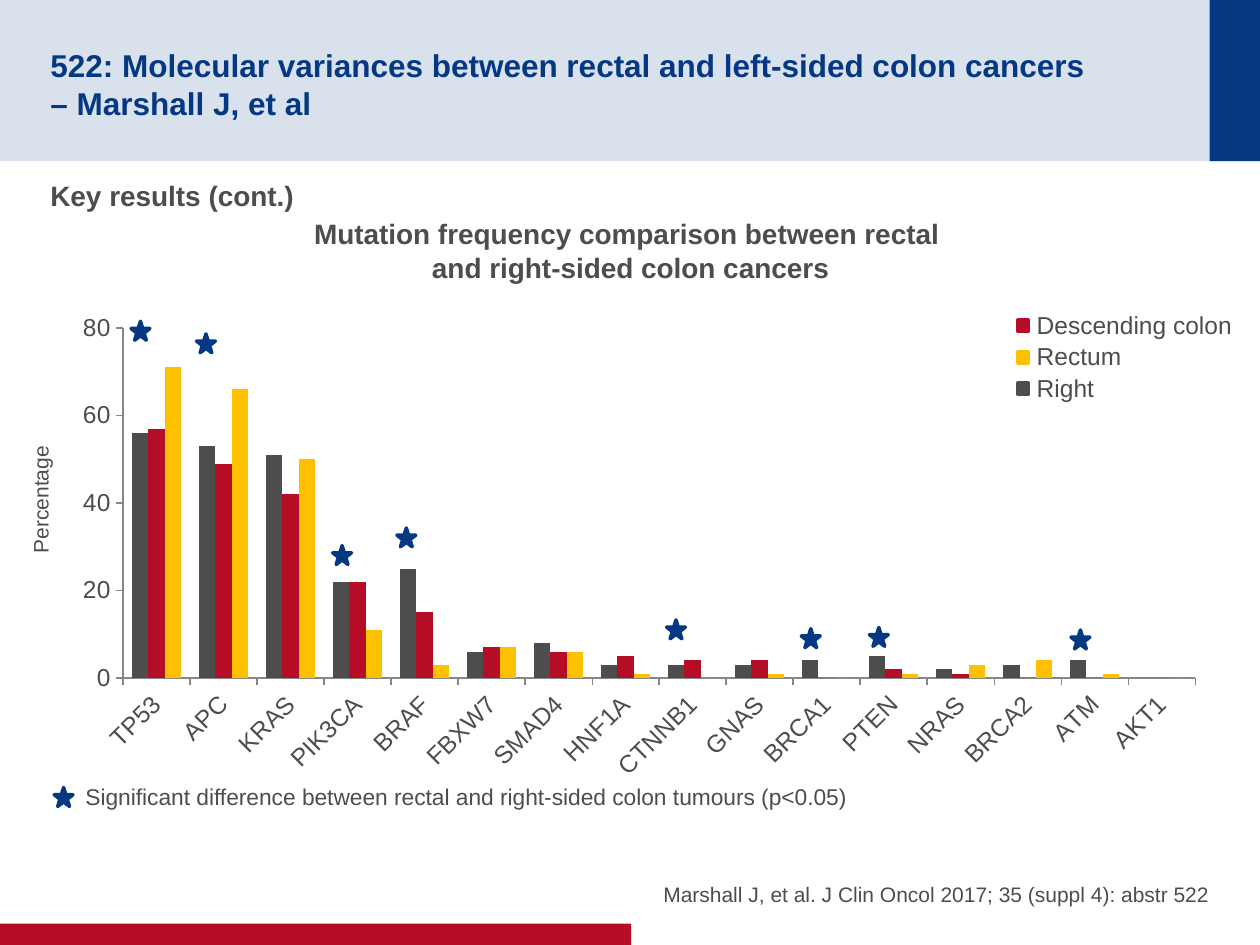
"""Builds a slide comparing mutation frequencies by tumour site."""
from pptx import Presentation
from pptx.chart.data import CategoryChartData
from pptx.dml.color import RGBColor
from pptx.enum.chart import XL_CHART_TYPE, XL_TICK_MARK
from pptx.enum.shapes import MSO_SHAPE
from pptx.enum.text import MSO_ANCHOR, PP_ALIGN
from pptx.oxml import parse_xml
from pptx.oxml.ns import nsdecls, qn
from pptx.util import Inches, Pt

CLUSTERED = XL_CHART_TYPE.COLUMN_CLUSTERED
OUTSIDE, NO_TICK = XL_TICK_MARK.OUTSIDE, XL_TICK_MARK.NONE
RECT, STAR = MSO_SHAPE.RECTANGLE, MSO_SHAPE.STAR_5_POINT
TOP, MIDDLE, BOTTOM = MSO_ANCHOR.TOP, MSO_ANCHOR.MIDDLE, MSO_ANCHOR.BOTTOM
LEFT, CENTER, RIGHT = PP_ALIGN.LEFT, PP_ALIGN.CENTER, PP_ALIGN.RIGHT

NAVY, PALE, RED, YELLOW, GREY, AXIS = "043882", "D9E1EC", "B60D27", "FFC000", "4D4D4D", "868686"
PADDED, FLUSH, NONE = (0.1, 0.05, 0.1, 0.05), (0, 0.05, 0, 0.05), (0, 0, 0, 0)
STAR_SIZE = 0.15

GENES = ["TP53", "APC", "KRAS", "PIK3CA", "BRAF", "FBXW7", "SMAD4", "HNF1A",
         "CTNNB1", "GNAS", "BRCA1", "PTEN", "NRAS", "BRCA2", "ATM", "AKT1"]
SERIES = [
    ("Right", GREY, (56, 53, 51, 22, 25, 6, 8, 3, 3, 3, 4, 5, 2, 3, 4, 0)),
    ("Descending colon", RED, (57, 49, 42, 22, 15, 7, 6, 5, 4, 4, 0, 2, 1, 0, 0, 0)),
    ("Rectum", YELLOW, (71, 66, 50, 11, 3, 7, 6, 1, 0, 1, 0, 1, 3, 4, 1, 0)),
]
LEGEND = SERIES[1:] + SERIES[:1]
STARS = [(0.43, 6.25), (1.04, 2.55), (1.56, 2.65), (2.64, 4.33), (3.15, 4.19),
         (5.29, 4.92), (6.36, 4.99), (6.9, 4.98), (8.5, 5)]


def rgb(value):
    return RGBColor.from_string(value)


class SlideBuilder:
    def __init__(self, prs, font="Arial", color=GREY):
        self.s = prs.slides.add_slide(prs.slide_layouts[6])
        self.font, self.color = font, color

    def style(self, font, size, color=None, bold=False):
        font.name, font.size, font.bold = self.font, Pt(size), bold
        font.color.rgb = rgb(color or self.color)

    def shape(self, kind, box, color, line=None):
        sp = self.s.shapes.add_shape(kind, *map(Inches, box))
        sp.shadow.inherit = False
        sp.fill.solid()
        sp.fill.fore_color.rgb = rgb(color)
        if line:
            sp.line.color.rgb = rgb(color)
            sp.line.width = Pt(line)
        else:
            sp.line.fill.background()

    def text(self, text, box, size, color=None, bold=False, align=LEFT, anchor=TOP,
             insets=PADDED, wrap=True, rotation=0):
        sp = self.s.shapes.add_textbox(*map(Inches, box))
        sp.rotation = rotation
        tf = sp.text_frame
        tf.word_wrap, tf.vertical_anchor = wrap, anchor
        tf.margin_left, tf.margin_top, tf.margin_right, tf.margin_bottom = map(Inches, insets)
        tf.text = text
        for p in tf.paragraphs:
            p.alignment = align
            self.style(p.font, size, color, bold)

    def column_chart(self, box, categories, series, layout):
        data = CategoryChartData()
        data.categories = categories
        for name, _, values in series:
            data.add_series(name, values)
        chart = self.s.shapes.add_chart(CLUSTERED, *map(Inches, box), data).chart
        chart.has_legend = chart.has_title = False
        self.style(chart.font, 14)
        plot = chart.plots[0]
        plot.gap_width, plot.overlap, plot.vary_by_categories = 110, 0, False
        for item, (_, color, _) in zip(plot.series, series):
            item.format.fill.solid()
            item.format.fill.fore_color.rgb = rgb(color)
        cat, val = chart.category_axis, chart.value_axis
        for axis in (cat, val):
            axis.has_major_gridlines = False
            axis.major_tick_mark, axis.minor_tick_mark = OUTSIDE, NO_TICK
            axis.format.line.color.rgb = rgb(AXIS)
            axis.format.line.width = Pt(0.75)
            self.style(axis.tick_labels.font, 14)
        val.minimum_scale, val.maximum_scale, val.major_unit = 0, 80, 20
        cat._element.find(qn("c:txPr")).find(qn("a:bodyPr")).set("rot", "-2700000")
        self.place_plot(chart, layout)

    def place_plot(self, chart, layout):
        area = chart._chartSpace.chart.plotArea
        for old in area.findall(qn("c:layout")):
            area.remove(old)
        modes = '<c:xMode val="edge"/><c:yMode val="edge"/>'
        sizes = "".join(f'<c:{k} val="{v}"/>' for k, v in zip("xywh", layout))
        area.insert(0, parse_xml(
            f'<c:layout {nsdecls("c")}><c:manualLayout><c:layoutTarget val="inner"/>'
            f'{modes}{sizes}</c:manualLayout></c:layout>'))


def main():
    prs = Presentation()
    prs.slide_width, prs.slide_height = Inches(10), Inches(7.5)
    b = SlideBuilder(prs)
    b.shape(RECT, (0, 0, 10, 1.28), PALE)
    b.shape(RECT, (9.6, 0, 0.4, 1.28), NAVY)
    b.shape(RECT, (0, 7.33, 5.01, 0.17), RED)
    b.column_chart((0.48, 2.41, 9.2, 3.86), GENES, SERIES, (0.054, 0.05, 0.925, 0.72))

    b.text("522: Molecular variances between rectal and left-sided colon cancers \v"
           "– Marshall J, et al", (0.4, 0.2, 9.01, 0.88), 18, NAVY, True,
           anchor=MIDDLE, insets=(0, 0.05, 0, 0))
    b.text("Key results (cont.)", (0.4, 1.37, 9.2, 0.55), 16, bold=True, insets=FLUSH)
    b.text("Marshall J, et al. J Clin Oncol 2017; 35 (suppl 4): abstr 522",
           (5.08, 6.67, 4.52, 0.53), 12, align=RIGHT, anchor=BOTTOM, insets=NONE)
    b.text("Mutation frequency comparison between rectal \nand right-sided colon cancers",
           (2.32, 1.67, 5.37, 0.64), 16, bold=True, align=CENTER, wrap=False)
    b.text("Significant difference between rectal and right-sided colon tumours (p<0.05)",
           (0.58, 6.16, 9.17, 0.32), 13)
    b.text("Percentage", (-0.21, 3.81, 1.06, 0.3), 12, wrap=False, rotation=270)

    for i, (name, color, _) in enumerate(LEGEND):
        y = 2.41 + 0.25 * i
        b.shape(RECT, (8.08, y + 0.13, 0.08, 0.09), color, 2)
        b.text(name, (8.13, y, 1.76, 0.34), 14, wrap=False)
    for x, y in STARS:
        b.shape(STAR, (x, y, STAR_SIZE, STAR_SIZE), NAVY, 2)
    prs.save("out.pptx")


if __name__ == "__main__":
    main()
